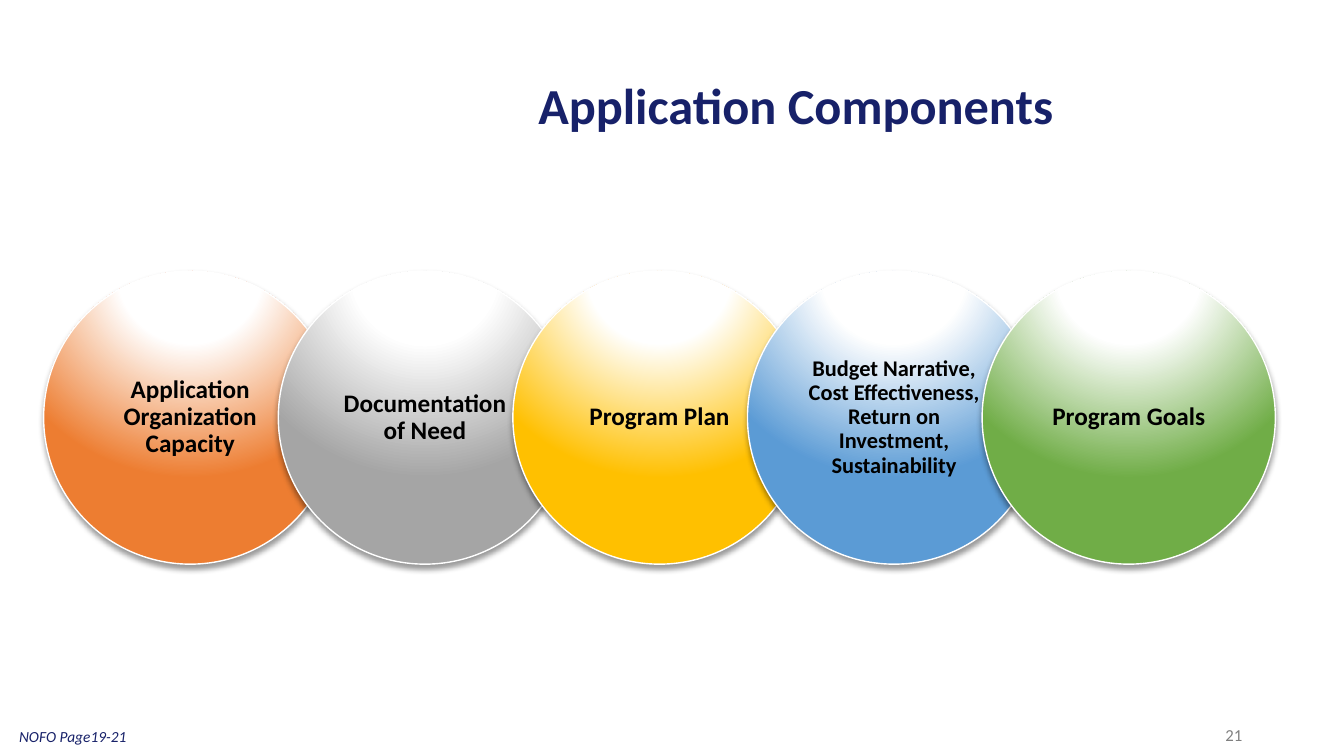
import pptx
import pptx.util
import pptx.oxml
import pptx.oxml.ns
import pptx.dml.color
import pptx.enum.shapes
import pptx.enum.text

RGBColor = pptx.dml.color.RGBColor
ALIGN = pptx.enum.text.PP_ALIGN
ANCHOR = pptx.enum.text.MSO_ANCHOR

NAVY = RGBColor(0x17, 0x21, 0x69)
GRAY = RGBColor(0x80, 0x80, 0x80)
BLACK = RGBColor(0, 0, 0)
WHITE = RGBColor(0xFF, 0xFF, 0xFF)
ORANGE = RGBColor(0xED, 0x7D, 0x31)
SILVER = RGBColor(0xA5, 0xA5, 0xA5)
GOLD = RGBColor(0xFF, 0xC0, 0x00)
BLUE = RGBColor(0x5B, 0x9B, 0xD5)
GREEN = RGBColor(0x70, 0xAD, 0x47)

SLIDE_WIDTH = pptx.util.Inches(13.33)
SLIDE_HEIGHT = pptx.util.Inches(7.5)
COLUMN = SLIDE_WIDTH / 100
ROW = SLIDE_HEIGHT / 100

CHAIN_LEFT = 3.25
CHAIN_TOP = 35.85
DIAMETER = 21.82
STEP = 0.8 * DIAMETER

COMPONENTS = [
    ("Application Organization Capacity", ORANGE, 18),
    ("Documentation of Need", SILVER, 18),
    ("Program Plan", GOLD, 18),
    ("Budget Narrative, Cost Effectiveness, Return on Investment, Sustainability", BLUE, 16),
    ("Program Goals", GREEN, 18),
]

GLOSS = """<a:gradFill {ns} rotWithShape="1"><a:gsLst>
<a:gs pos="0"><a:srgbClr val="{white}"/></a:gs>
<a:gs pos="35000"><a:srgbClr val="{white}"/></a:gs>
<a:gs pos="100000"><a:srgbClr val="{color}"/></a:gs></a:gsLst>
<a:path path="circle"><a:fillToRect l="50000" t="-80000" r="50000" b="180000"/></a:path>
</a:gradFill>"""

SHADOW = """<a:outerShdw {ns} blurRad="{blur}" dist="{distance}" dir="5400000" rotWithShape="0">
<a:srgbClr val="{black}"><a:alpha val="40000"/></a:srgbClr></a:outerShdw>"""


def apply_format(target, values):
    for attribute, value in values.items():
        setattr(target, attribute, value)


def place(column, row, columns, rows):
    return [round(share) for share in (column * COLUMN, row * ROW, columns * COLUMN, rows * ROW)]


def write_text(frame, wording, font, paragraph, box):
    apply_format(frame, {"word_wrap": True, **box})
    line = frame.paragraphs[0]
    apply_format(line, paragraph)
    run = line.add_run()
    run.text = wording
    color = font.pop("color")
    apply_format(run.font, {"name": "Calibri", **font})
    run.font.color.rgb = color


def add_label(slide, area, wording, font, paragraph, anchor):
    label = slide.shapes.add_textbox(*place(*area))
    write_text(label.text_frame, wording, font, paragraph, {"vertical_anchor": anchor})


def add_gloss_and_shadow(circle, color):
    ns = pptx.oxml.ns.nsdecls("a")
    circle.fill.solid()
    properties = circle.element.spPr
    plain_fill = properties.find(pptx.oxml.ns.qn("a:solidFill"))
    gloss = pptx.oxml.parse_xml(GLOSS.format(ns=ns, white=WHITE, color=color))
    properties.replace(plain_fill, gloss)
    circle.shadow.inherit = False
    effects = properties.find(pptx.oxml.ns.qn("a:effectLst"))
    effects.append(pptx.oxml.parse_xml(SHADOW.format(
        ns=ns, black=BLACK, blur=pptx.util.Pt(4), distance=pptx.util.Pt(3))))


def add_component(slide, position, wording, color, size):
    left, top, diameter, _ = place(CHAIN_LEFT + position * STEP, CHAIN_TOP, DIAMETER, 0)
    circle = slide.shapes.add_shape(
        pptx.enum.shapes.MSO_SHAPE.OVAL, left, top, diameter, diameter)
    circle.line.color.rgb = WHITE
    circle.line.width = pptx.util.Pt(1)
    add_gloss_and_shadow(circle, color)
    side, edge = pptx.util.Inches(0.16), pptx.util.Inches(0.03)
    write_text(
        circle.text_frame, wording,
        {"size": pptx.util.Pt(size), "bold": True, "color": BLACK},
        {"alignment": ALIGN.CENTER, "line_spacing": 0.9},
        {"vertical_anchor": ANCHOR.MIDDLE, "margin_left": side, "margin_right": side,
         "margin_top": edge, "margin_bottom": edge})


def main():
    deck = pptx.Presentation()
    apply_format(deck, {"slide_width": SLIDE_WIDTH, "slide_height": SLIDE_HEIGHT})
    slide = deck.slides.add_slide(deck.slide_layouts[6])
    add_label(slide, (27.98, 10.27, 62.49, 8.13), "Application Components",
              {"size": pptx.util.Pt(36), "bold": True, "color": NAVY},
              {"alignment": ALIGN.CENTER, "line_spacing": 0.9}, ANCHOR.MIDDLE)
    add_label(slide, (70.67, 94.53, 22.5, 5.33), "21",
              {"size": pptx.util.Pt(12), "color": GRAY},
              {"alignment": ALIGN.RIGHT}, ANCHOR.MIDDLE)
    add_label(slide, (0.68, 95.47, 17.48, 3.87), "NOFO Page19-21",
              {"size": pptx.util.Pt(11), "italic": True, "color": NAVY},
              {"alignment": ALIGN.LEFT}, ANCHOR.TOP)
    for position, component in enumerate(COMPONENTS):
        add_component(slide, position, *component)
    deck.save("out.pptx")


if __name__ == "__main__":
    main()
